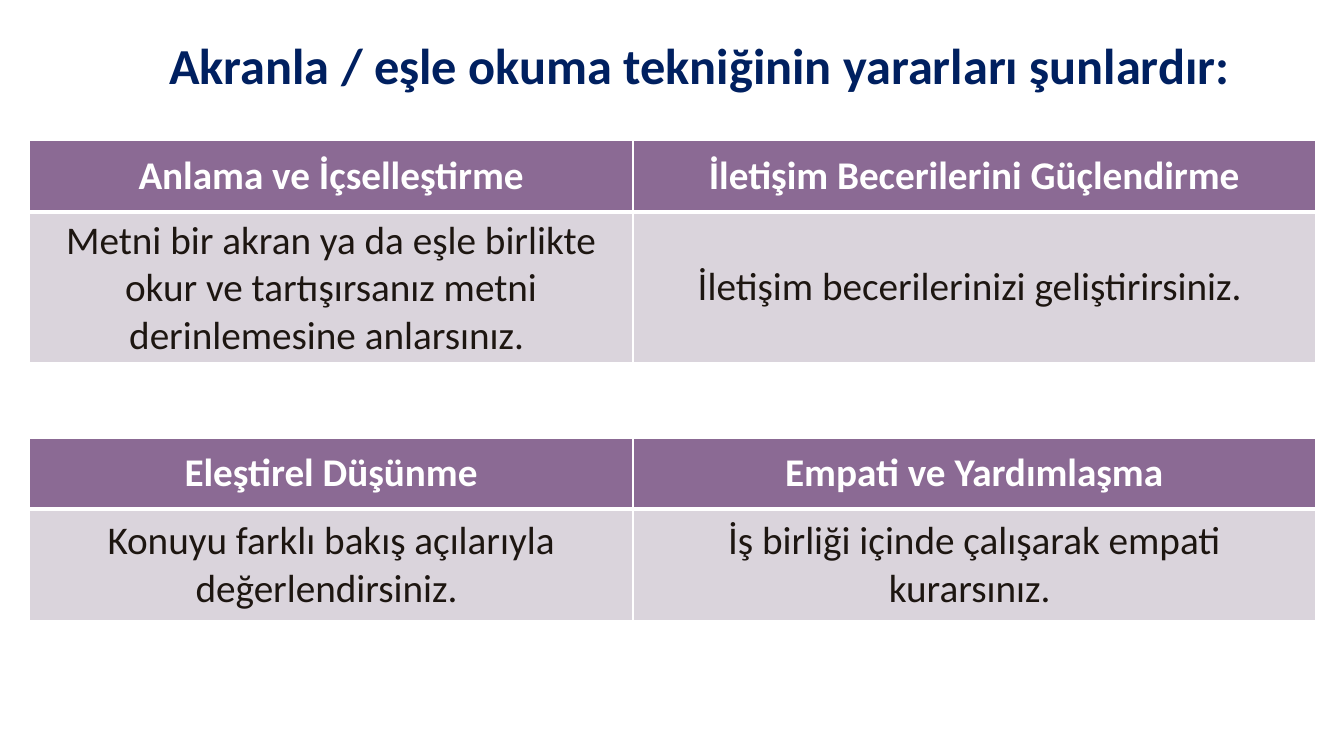
from lxml.etree import SubElement
from pptx import Presentation
from pptx.dml.color import RGBColor
from pptx.enum.text import MSO_ANCHOR as Anchor, PP_ALIGN as Align
from pptx.oxml.ns import qn
from pptx.util import Pt

TITLE = "Akranla / eşle okuma tekniğinin yararları şunlardır:"
BENEFITS = [
    {
        "top": 100.2,
        "heights": (51, 108),
        "rows": [
            ("Anlama ve İçselleştirme", "İletişim Becerilerini Güçlendirme"),
            ("Metni bir akran ya da eşle birlikte okur ve tartışırsanız metni derinlemesine anlarsınız. ",
             "İletişim becerilerinizi geliştirirsiniz. "),
        ],
    },
    {
        "top": 312.8,
        "heights": (51, 79.2),
        "rows": [
            ("Eleştirel Düşünme", "Empati ve Yardımlaşma"),
            ("Konuyu farklı bakış açılarıyla değerlendirsiniz. ",
             "İş birliği içinde çalışarak empati kurarsınız. "),
        ],
    },
]
TABLE_LEFT = 20.8
COLUMNS = (431.3, 487.4)
HEADER = {"fill": "8B6A94", "text": "FFFFFF", "bold": True, "bottom": 3}
BODY = {"fill": "DAD4DC", "text": "1D1611", "bold": False, "bottom": 1}


def color(value):
    return RGBColor.from_string(value)


def style_paragraph(para, size, value, bold):
    para.alignment = Align.CENTER
    para.font.name = "Calibri"
    para.font.size = Pt(size)
    para.font.bold = bold
    para.font.color.rgb = color(value)


def add_borders(cell, widths):
    properties = cell._tc.get_or_add_tcPr()
    for side, width in widths.items():
        line = SubElement(properties, qn(f"a:ln{side}"), w=str(Pt(width)))
        SubElement(SubElement(line, qn("a:solidFill")), qn("a:srgbClr"), val="FFFFFF")


def fill_cell(cell, text, style, top):
    cell.text = text
    cell.vertical_anchor = Anchor.MIDDLE
    add_borders(cell, {"L": 1, "R": 1, "T": top, "B": style["bottom"]})
    cell.fill.solid()
    cell.fill.fore_color.rgb = color(style["fill"])
    style_paragraph(cell.text_frame.paragraphs[0], 28, style["text"], style["bold"])


def add_title(page):
    box = page.shapes.add_textbox(Pt(72), Pt(25.9), Pt(856), Pt(46.8))
    frame = box.text_frame
    frame.word_wrap = True
    frame.vertical_anchor = Anchor.BOTTOM
    frame.margin_left = frame.margin_right = Pt(9.4)
    frame.margin_top = frame.margin_bottom = Pt(5)
    para = frame.paragraphs[0]
    para.text = TITLE
    para.line_spacing = 0.85
    style_paragraph(para, 36, "002060", True)


def add_benefits(page, benefits):
    heights = benefits["heights"]
    table = page.shapes.add_table(
        len(heights), len(COLUMNS), Pt(TABLE_LEFT), Pt(benefits["top"]),
        Pt(sum(COLUMNS)), Pt(sum(heights))).table
    for column, width in zip(table.columns, COLUMNS):
        column.width = Pt(width)
    tops = (1, HEADER["bottom"])
    for row, height, texts, style, top in zip(
            table.rows, heights, benefits["rows"], (HEADER, BODY), tops):
        row.height = Pt(height)
        for cell, text in zip(row.cells, texts):
            fill_cell(cell, text, style, top)


def main():
    deck = Presentation()
    deck.slide_width, deck.slide_height = Pt(960), Pt(540)
    page = deck.slides.add_slide(deck.slide_layouts[6])
    add_title(page)
    for benefits in BENEFITS:
        add_benefits(page, benefits)
    deck.save("out.pptx")


if __name__ == "__main__":
    main()
